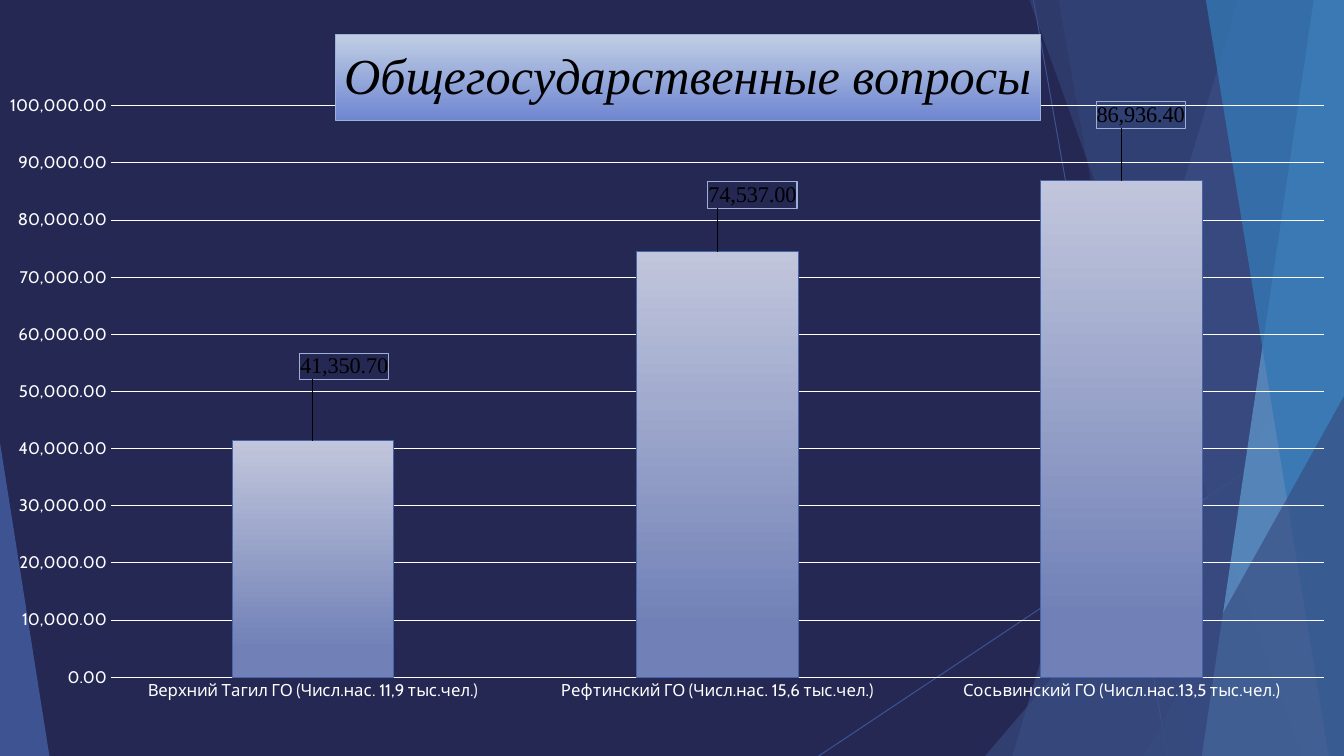
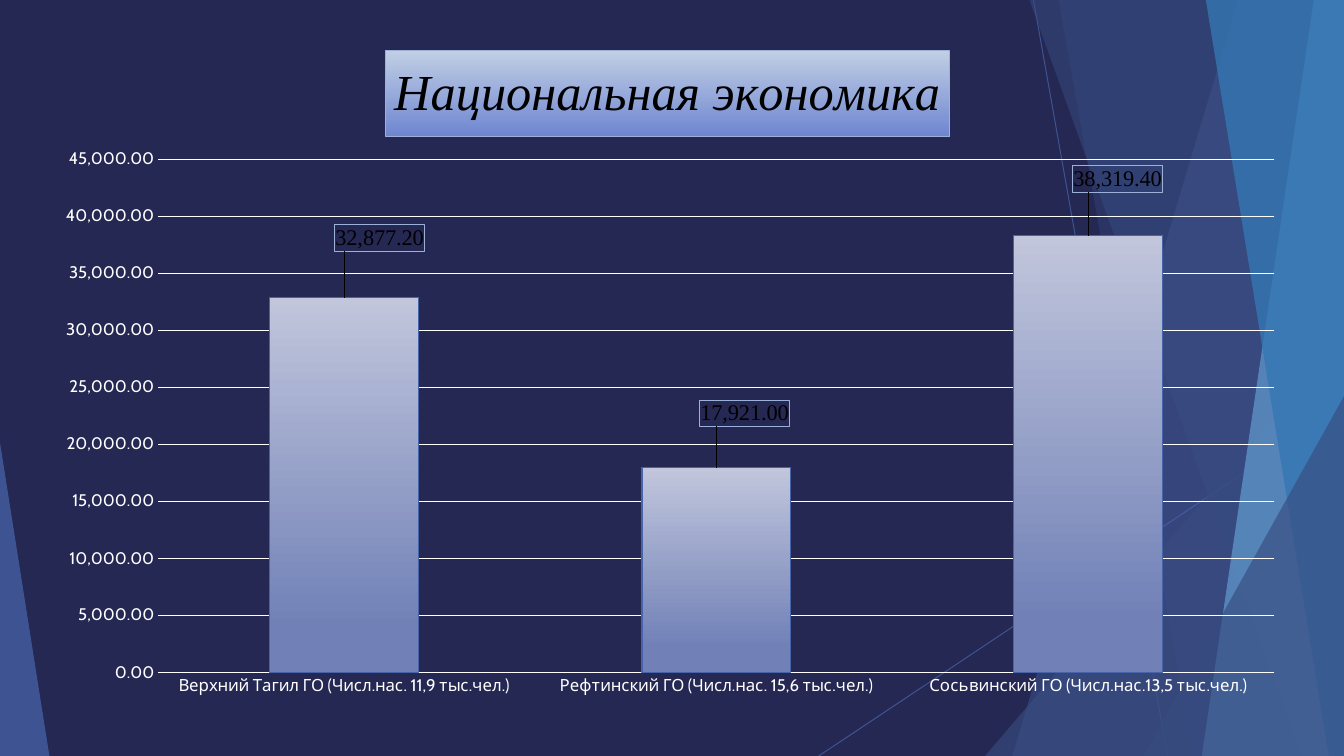
from lxml import etree
from pptx import Presentation
from pptx.chart.data import CategoryChartData
from pptx.dml.color import RGBColor
from pptx.enum.chart import XL_CHART_TYPE, XL_LABEL_POSITION, XL_TICK_MARK
from pptx.enum.shapes import MSO_CONNECTOR, MSO_SHAPE
from pptx.oxml import parse_xml
from pptx.oxml.ns import nsdecls, qn
from pptx.util import Inches, Pt

WIDTH, HEIGHT = 13.33, 7.5

NAVY = RGBColor(0x24, 0x28, 0x52)
INDIGO = RGBColor(0x4A, 0x66, 0xAC)
DEEP_BLUE = RGBColor(0x38, 0x4C, 0x81)
SKY = RGBColor(0x62, 0x9D, 0xD1)
OCEAN = RGBColor(0x34, 0x77, 0xB2)
WHITE = RGBColor(0xFF, 0xFF, 0xFF)
BLACK = RGBColor(0, 0, 0)
BAR_TOP, BAR_BOTTOM = RGBColor(0xC1, 0xC6, 0xDC), RGBColor(0x71, 0x81, 0xB7)
BAR_LINE = RGBColor(0x48, 0x64, 0xA8)
TITLE_TOP, TITLE_BOTTOM = RGBColor(0xC0, 0xCF, 0xE4), RGBColor(0x6F, 0x86, 0xD1)
FRAME_LINE = RGBColor(0x9D, 0xB0, 0xD8)

BODY_FONT, SERIF_FONT = "Cabin", "Times New Roman"
NUMBER_FORMAT = "#,##0.00"

RAYS = [((10.25, 0), (11.58, HEIGHT)), ((WIDTH, 4.03), (8.12, HEIGHT))]

# Panels reach the right edge: ("band", top x, bottom x) or
# ("triangle", left, top, width, apex), all standing on the bottom edge.
PANELS = [
    (("band", 12.28, 10.04), INDIGO, 36),
    (("band", 10.5, 11.83), INDIGO, 20),
    (("triangle", 9.77, 3.33, 3.56, 1), DEEP_BLUE, 66),
    (("band", 10.21, 12.91), DEEP_BLUE, 50),
    (("band", 13.03, 11.92), SKY, 70),
    (("band", 11.96, 13.18), OCEAN, 80),
    (("triangle", 11.34, 3.93, 1.99, 1), DEEP_BLUE, 66),
    (("triangle", 0, 4.39, 0.49, 0), INDIGO, 70),
]

MUNICIPALITIES = [
    "Верхний Тагил ГО (Числ.нас. 11,9 тыс.чел.)",
    "Рефтинский ГО (Числ.нас. 15,6 тыс.чел.)",
    "Сосьвинский ГО (Числ.нас.13,5 тыс.чел.)",
]

# Places are in inches on the slide; label shifts are from the bar's top.
CHARTS = [
    {
        "title": "Общегосударственные вопросы",
        "values": (41350.7, 74537, 86936.4),
        "axis": (100000, 10000),
        "frame": (0.1, 0.14, 13.04, 7.22),
        "title_at": (3.3, 0.34),
        "plot": (1.07, 1.05, 12.06, 5.67),
        "label_shifts": [(0.31, -0.57), (0.35, -0.39), (0.19, -0.48)],
    },
    {
        "title": "Национальная экономика",
        "values": (32877.2, 17921, 38319.4),
        "axis": (45000, 5000),
        "frame": (0.4, 0.31, 12.49, 6.74),
        "title_at": (3.82, 0.5),
        "plot": (1.57, 1.58, 11.07, 5.09),
        "label_shifts": [(0.35, -0.42), (0.28, -0.37), (0.29, -0.39)],
    },
]


def set_opacity(color_parent, percent):
    color = color_parent.find(".//" + qn("a:srgbClr"))
    etree.SubElement(color, qn("a:alpha"), val=str(percent * 1000))


def add_ray(shapes, start, end):
    ray = shapes.add_connector(
        MSO_CONNECTOR.STRAIGHT, *(Inches(value) for value in start + end))
    ray.line.color.rgb = INDIGO
    ray.line.width = Pt(0.75)
    properties = ray.element.spPr
    set_opacity(properties, 70)
    etree.SubElement(properties, qn("a:effectLst"))
    return ray


def add_panel(shapes, outline, color, opacity):
    kind, *numbers = outline
    if kind == "band":
        top_x, bottom_x = numbers
        corners = [(top_x, 0), (WIDTH, 0), (WIDTH, HEIGHT), (bottom_x, HEIGHT)]
        corners = [(Inches(x), Inches(y)) for x, y in corners]
        builder = shapes.build_freeform(*corners[0])
        builder.add_line_segments(corners[1:], close=True)
        panel = builder.convert_to_shape()
    else:
        left, top, width, apex = numbers
        panel = shapes.add_shape(
            MSO_SHAPE.ISOSCELES_TRIANGLE, Inches(left), Inches(top),
            Inches(width), Inches(HEIGHT - top))
        panel.adjustments[0] = apex
    panel.shadow.inherit = False
    panel.fill.solid()
    panel.fill.fore_color.rgb = color
    panel.line.fill.background()
    set_opacity(panel.element.spPr, opacity)
    return panel


def decorate_master(presentation, slide):
    """Draw the backdrop with the slide's shapes, then move it to the master."""
    master = presentation.slide_master
    master.background.fill.solid()
    master.background.fill.fore_color.rgb = NAVY
    backdrop = [add_ray(slide.shapes, *ray) for ray in RAYS]
    backdrop += [add_panel(slide.shapes, *panel) for panel in PANELS]
    for shape in backdrop:
        master.shapes.element.append(shape.element)


def set_layout(parent, index, x, y, width=None, height=None):
    """Give a chart part a manual layout, in fractions of the chart."""
    for old in parent.findall(qn("c:layout")):
        parent.remove(old)
    layout = etree.Element(qn("c:layout"))
    manual = etree.SubElement(layout, qn("c:manualLayout"))
    settings = []
    if width is not None:
        settings.append(("layoutTarget", "inner"))
    if parent.tag != qn("c:dLbl"):
        settings += [("xMode", "edge"), ("yMode", "edge")]
    settings += [("x", x), ("y", y)]
    if width is not None:
        settings += [("w", width), ("h", height)]
    for name, value in settings:
        text = value if isinstance(value, str) else f"{value:.4f}"
        etree.SubElement(manual, qn("c:" + name), val=text)
    parent.insert(index, layout)


def fill_downwards(fill, top, bottom, end=1.0):
    fill.gradient()
    fill.gradient_angle = 270
    for stop, color, position in zip(fill.gradient_stops, (top, bottom), (0, end)):
        stop.color.rgb = color
        stop.position = position


def set_font(font, name, size, color, italic=False):
    font.name, font.size, font.italic, font.bold = name, Pt(size), italic, False
    font.color.rgb = color


def format_axes(chart, maximum, step):
    for axis in (chart.category_axis, chart.value_axis):
        axis.major_tick_mark = axis.minor_tick_mark = XL_TICK_MARK.NONE
        axis.format.line.fill.background()
        set_font(axis.tick_labels.font, BODY_FONT, 12, WHITE)
    axis = chart.value_axis
    axis.minimum_scale, axis.maximum_scale, axis.major_unit = 0, maximum, step
    axis.tick_labels.number_format = NUMBER_FORMAT
    axis.tick_labels.number_format_is_linked = False
    axis.major_gridlines.format.line.color.rgb = WHITE
    axis.major_gridlines.format.line.width = Pt(0.75)


def add_labels(series, shifts, width, height):
    for index, (right, down) in enumerate(shifts):
        label = series.points[index].data_label
        set_font(label.font, SERIF_FONT, 16, BLACK)
        label.position = XL_LABEL_POSITION.OUTSIDE_END
    labels = series._element.iter(qn("c:dLbl"))
    for label, (right, down) in zip(list(labels), shifts):
        for old in label.findall(qn("c:spPr")):
            label.remove(old)
        set_layout(label, 1, right / width, down / height)
        label.insert(2, parse_xml(
            f'<c:numFmt {nsdecls("c")} formatCode="{NUMBER_FORMAT}" sourceLinked="0"/>'))
        label.insert(3, parse_xml(
            f'<c:spPr {nsdecls("c", "a")}><a:noFill/><a:ln w="{Pt(0.75)}"><a:solidFill>'
            f'<a:srgbClr val="{FRAME_LINE}"/></a:solidFill></a:ln></c:spPr>'))


def add_title(chart, title, x, y):
    chart_title = chart.chart_title
    paragraph = chart_title.text_frame.paragraphs[0]
    paragraph.text = title
    set_font(paragraph.font, SERIF_FONT, 36, BLACK, italic=True)
    set_font(paragraph.runs[0].font, SERIF_FONT, 36, BLACK, italic=True)
    fill_downwards(chart_title.format.fill, TITLE_TOP, TITLE_BOTTOM)
    chart_title.format.line.color.rgb = FRAME_LINE
    chart_title.format.line.width = Pt(0.5)
    set_layout(chart_title.element, 1, x, y)


def add_column_chart(slide, content):
    left, top, width, height = content["frame"]
    data = CategoryChartData(number_format=NUMBER_FORMAT)
    data.categories = MUNICIPALITIES
    data.add_series(content["title"], content["values"])
    chart = slide.shapes.add_chart(
        XL_CHART_TYPE.COLUMN_CLUSTERED,
        *(Inches(value) for value in content["frame"]), data).chart
    set_font(chart.font, BODY_FONT, 10, WHITE)
    chart.has_legend = False
    format_axes(chart, *content["axis"])

    plot = chart.plots[0]
    plot.gap_width = 150
    plot.vary_by_categories = False
    series = plot.series[0]
    fill_downwards(series.format.fill, BAR_TOP, BAR_BOTTOM, end=0.88)
    series.format.line.color.rgb = BAR_LINE
    series.format.line.width = Pt(0.75)
    add_labels(series, content["label_shifts"], width, height)

    title_x, title_y = content["title_at"]
    add_title(chart, content["title"], (title_x - left) / width, (title_y - top) / height)
    x, y, plot_width, plot_height = content["plot"]
    plot_area = chart.element.find(".//" + qn("c:plotArea"))
    set_layout(plot_area, 0, (x - left) / width, (y - top) / height,
               plot_width / width, plot_height / height)


def main():
    presentation = Presentation()
    presentation.slide_width = Inches(WIDTH)
    presentation.slide_height = Inches(HEIGHT)
    blank = presentation.slide_layouts.get_by_name("Blank")
    slides = [presentation.slides.add_slide(blank) for _ in CHARTS]
    decorate_master(presentation, slides[0])
    for slide, content in zip(slides, CHARTS):
        add_column_chart(slide, content)
    presentation.save("out.pptx")


if __name__ == "__main__":
    main()
